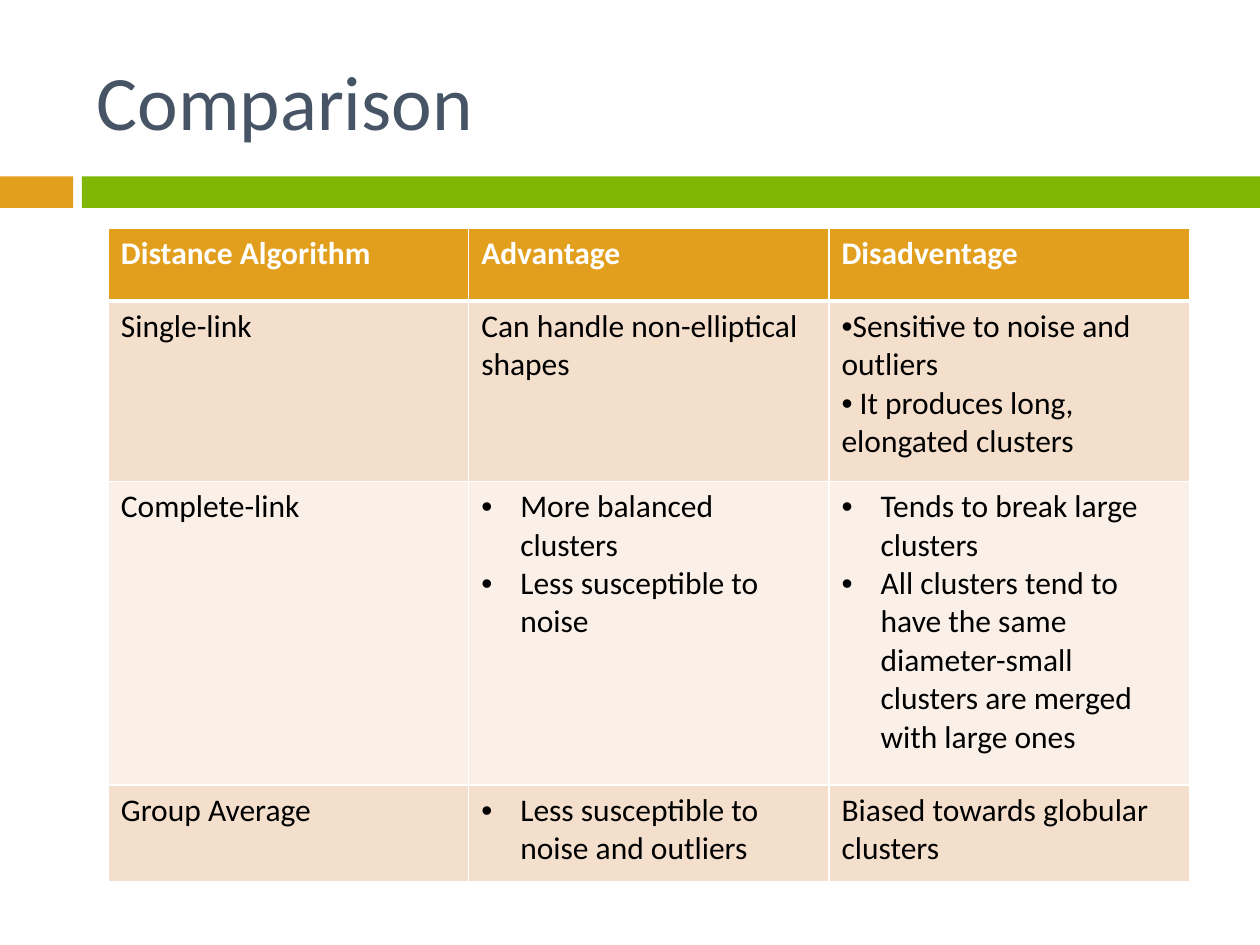
"""Build the slide comparing the distance algorithms of hierarchical clustering."""
from lxml import etree
from pptx import Presentation
from pptx.dml.color import RGBColor
from pptx.enum import shapes, text
from pptx.oxml.ns import qn
from pptx.util import Inches, Pt

COLORS = {
    "orange": "E29F1D", "green": "80B606", "slate": "465466", "white": "FFFFFF",
    "black": "000000", "sand": "F4DFCD", "cream": "FAF0E8",
}
FONT = "Calibri"
TITLE = "Comparison"
BARS = [("orange", 0, 0.58), ("green", 0.65, 9.35)]
COLUMN_WIDTH = 2.86
ROW_HEIGHTS = [0.58, 1.43, 2.41, 0.77]
ROW_FILLS = ["orange", "sand", "cream", "sand"]
INDENTS = {"flush": 0, "hanging": 0.31}
ROWS = [
    [("plain", ["Distance Algorithm"]), ("plain", ["Advantage"]), ("plain", ["Disadventage"])],
    [
        ("plain", ["Single-link"]),
        ("plain", ["Can handle non-elliptical shapes"]),
        ("flush", ["Sensitive to noise and outliers", " It produces long, elongated clusters"]),
    ],
    [
        ("plain", ["Complete-link"]),
        ("hanging", ["More balanced clusters", "Less susceptible to noise"]),
        ("hanging", [
            "Tends to break large clusters",
            "All clusters tend to have the same diameter-small clusters are merged with large ones",
        ]),
    ],
    [
        ("plain", ["Group Average"]),
        ("hanging", ["Less susceptible to noise and outliers"]),
        ("plain", ["Biased towards globular clusters"]),
    ],
]


def color(name):
    return RGBColor.from_string(COLORS[name])


def paint(target, name):
    target.fill.solid()
    target.fill.fore_color.rgb = color(name)


def write(para, words, size, shade, bold=False):
    span = para.add_run()
    span.text = words
    for key, value in {"name": FONT, "size": Pt(size), "bold": bold}.items():
        setattr(span.font, key, value)
    span.font.color.rgb = color(shade)


def add_bullet(para, indent):
    props = para._p.get_or_add_pPr()
    props.set("marL", str(Inches(indent)))
    props.set("indent", str(Inches(-indent)))
    etree.SubElement(props, qn("a:buFont"), typeface="Arial")
    etree.SubElement(props, qn("a:buChar"), char="•")


def add_borders(cell, bottom):
    props = cell._tc.get_or_add_tcPr()
    for side, width in {"L": 1, "R": 1, "T": 1, "B": bottom}.items():
        line = etree.SubElement(props, qn(f"a:ln{side}"), w=str(Pt(width)))
        solid = etree.SubElement(line, qn("a:solidFill"))
        etree.SubElement(solid, qn("a:srgbClr"), val=COLORS["white"])


def add_bar(page, shade, left, width):
    bar = page.shapes.add_shape(
        shapes.MSO_SHAPE.RECTANGLE, Inches(left), Inches(1.4), Inches(width), Inches(0.25))
    bar.shadow.inherit = False
    bar.line.fill.background()
    paint(bar, shade)


def add_title(page):
    box = page.shapes.add_textbox(Inches(0.67), Inches(0.25), Inches(8.92), Inches(1.08))
    frame = box.text_frame
    frame.word_wrap = True
    frame.vertical_anchor = text.MSO_ANCHOR.MIDDLE
    write(frame.paragraphs[0], TITLE, 44, "slate")


def fill_cell(cell, style, lines, fill, header):
    add_borders(cell, 3 if header else 1)
    paint(cell, fill)
    frame = cell.text_frame
    for number, words in enumerate(lines):
        para = frame.add_paragraph() if number else frame.paragraphs[0]
        if style in INDENTS:
            add_bullet(para, INDENTS[style])
        write(para, words, 18, "white" if header else "black", header)


def add_comparison(page):
    count = len(ROWS[0])
    table = page.shapes.add_table(
        len(ROWS), count, Inches(0.86), Inches(1.81),
        Inches(COLUMN_WIDTH * count), Inches(sum(ROW_HEIGHTS))).table
    for column in table.columns:
        column.width = Inches(COLUMN_WIDTH)
    for r, (height, fill, row) in enumerate(zip(ROW_HEIGHTS, ROW_FILLS, ROWS)):
        table.rows[r].height = Inches(height)
        for c, (style, lines) in enumerate(row):
            fill_cell(table.cell(r, c), style, lines, fill, r == 0)


def main():
    deck = Presentation()
    deck.slide_width, deck.slide_height = Inches(10), Inches(7.5)
    page = deck.slides.add_slide(deck.slide_layouts[6])
    for bar in BARS:
        add_bar(page, *bar)
    add_title(page)
    add_comparison(page)
    deck.save("out.pptx")


if __name__ == "__main__":
    main()
